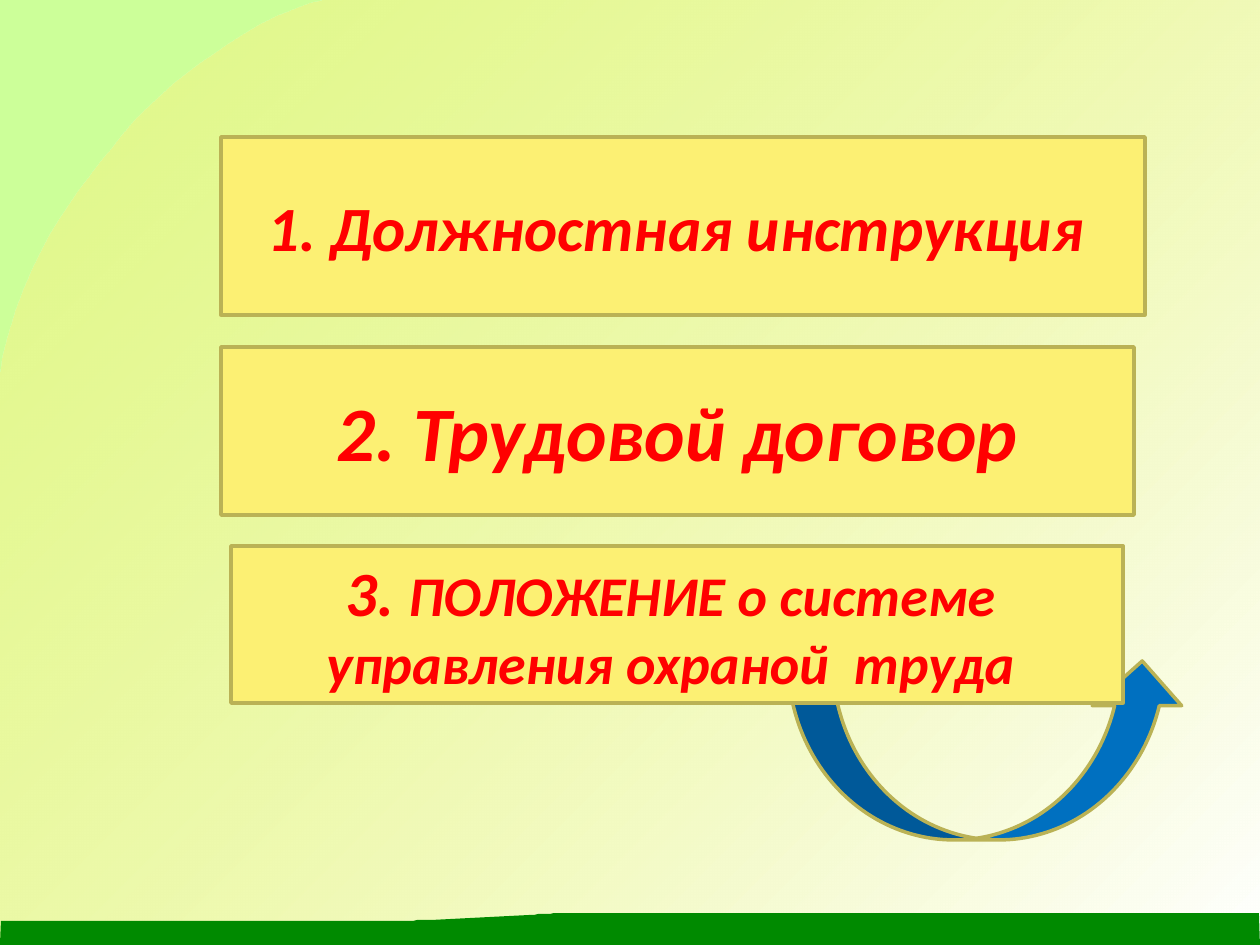
from lxml import etree
from pptx import Presentation
from pptx.dml.color import RGBColor
from pptx.enum.shapes import MSO_SHAPE
from pptx.enum.text import MSO_ANCHOR, PP_ALIGN
from pptx.oxml.ns import qn
from pptx.util import Emu, Pt

RECTANGLE = MSO_SHAPE.RECTANGLE
CURVED_UP_ARROW = MSO_SHAPE.CURVED_UP_ARROW
CENTER = PP_ALIGN.CENTER
MIDDLE = MSO_ANCHOR.MIDDLE

EMU_PER_PX = 914400 / 126
WIDTH, HEIGHT = 1260, 945
CURVE_STEPS = 16

MINT, YELLOW, WHITE = "CCFF99", "FCF073", "FFFFFF"
GREEN, BLUE, OLIVE, RED = "008A00", "0070C0", "BAB255", "FF0000"

BOXES = [
    ((231, 546, 892, 157), [("3. ", 36), ("ПОЛОЖЕНИЕ о системе  управления охраной  труда ", 32)]),
    ((221, 347, 913, 168), [("2. Трудовой договор", 44)]),
    ((221, 137, 924, 178), [("1. Должностная инструкция ", 36)]),
]


def px(value):
    return Emu(round(value * EMU_PER_PX))


def color(hex_text):
    return RGBColor.from_string(hex_text)


def curve(start, control_1, control_2, end):
    """Points along a cubic Bezier curve, without its start."""
    points = []
    for step in range(1, CURVE_STEPS + 1):
        t = step / CURVE_STEPS
        weights = ((1 - t) ** 3, 3 * t * (1 - t) ** 2, 3 * t * t * (1 - t), t ** 3)
        corners = (start, control_1, control_2, end)
        points.append(tuple(sum(w * corner[axis] for w, corner in zip(weights, corners))
                            for axis in (0, 1)))
    return points


def add_outline(slide, points):
    """Closed freeform without a line, through points in px."""
    builder = slide.shapes.build_freeform(*points[0], scale=EMU_PER_PX)
    builder.add_line_segments(points[1:], close=True)
    shape = builder.convert_to_shape()
    shape.shadow.inherit = False
    shape.line.fill.background()
    return shape


def add_glow(slide):
    """Large curved panel fading from translucent yellow to white."""
    top, bend, side = (325, 0), (123, 135), (0, 379)
    points = [top]
    points += curve(top, (239, 20), (146, 105), bend)
    points += curve(bend, (101, 166), (20, 244), side)
    points += [(0, HEIGHT), (WIDTH, HEIGHT), (WIDTH, 0)]
    fill = add_outline(slide, points).fill
    fill.gradient()
    fill.gradient_angle = 315
    for stop, hex_text, position in zip(fill.gradient_stops, (YELLOW, WHITE), (0, 1)):
        stop.color.rgb = color(hex_text)
        stop.position = position
    yellow = fill._xPr.find(".//" + qn("a:srgbClr"))
    etree.SubElement(yellow, qn("a:alpha"), val="39000")


def add_ground(slide):
    """Green strip along the bottom edge."""
    points = [(1259, 913), (596, 913)]
    points += curve((596, 913), (564, 913), (556, 913), (529, 915))
    points += [(431, 920)]
    points += curve((431, 920), (403, 921), (398, 921), (360, 921))
    points += [(1, 921), (0, HEIGHT), (WIDTH, HEIGHT)]
    fill = add_outline(slide, points).fill
    fill.solid()
    fill.fore_color.rgb = color(GREEN)


def add_preset(slide, kind, area, fill_color):
    shape = slide.shapes.add_shape(kind, *map(px, area))
    shape.shadow.inherit = False
    shape.fill.solid()
    shape.fill.fore_color.rgb = color(fill_color)
    shape.line.color.rgb = color(OLIVE)
    shape.line.width = Pt(2)
    return shape


def add_box(slide, area, runs):
    frame = add_preset(slide, RECTANGLE, area, YELLOW).text_frame
    frame.word_wrap = True
    frame.vertical_anchor = MIDDLE
    paragraph = frame.paragraphs[0]
    paragraph.alignment = CENTER
    font = paragraph.font
    font.name = "Calibri"
    font.bold = font.italic = True
    font.color.rgb = color(RED)
    for text, size in runs:
        run = paragraph.add_run()
        run.text = text
        run.font.size = Pt(size)


def main():
    presentation = Presentation()
    presentation.slide_width, presentation.slide_height = px(WIDTH), px(HEIGHT)
    slide = presentation.slides.add_slide(presentation.slide_layouts[6])
    background = slide.background.fill
    background.solid()
    background.fore_color.rgb = color(MINT)

    add_glow(slide)
    add_ground(slide)
    add_preset(slide, CURVED_UP_ARROW, (788, 661, 399, 179), BLUE)
    for area, runs in BOXES:
        add_box(slide, area, runs)
    presentation.save("out.pptx")


if __name__ == "__main__":
    main()
